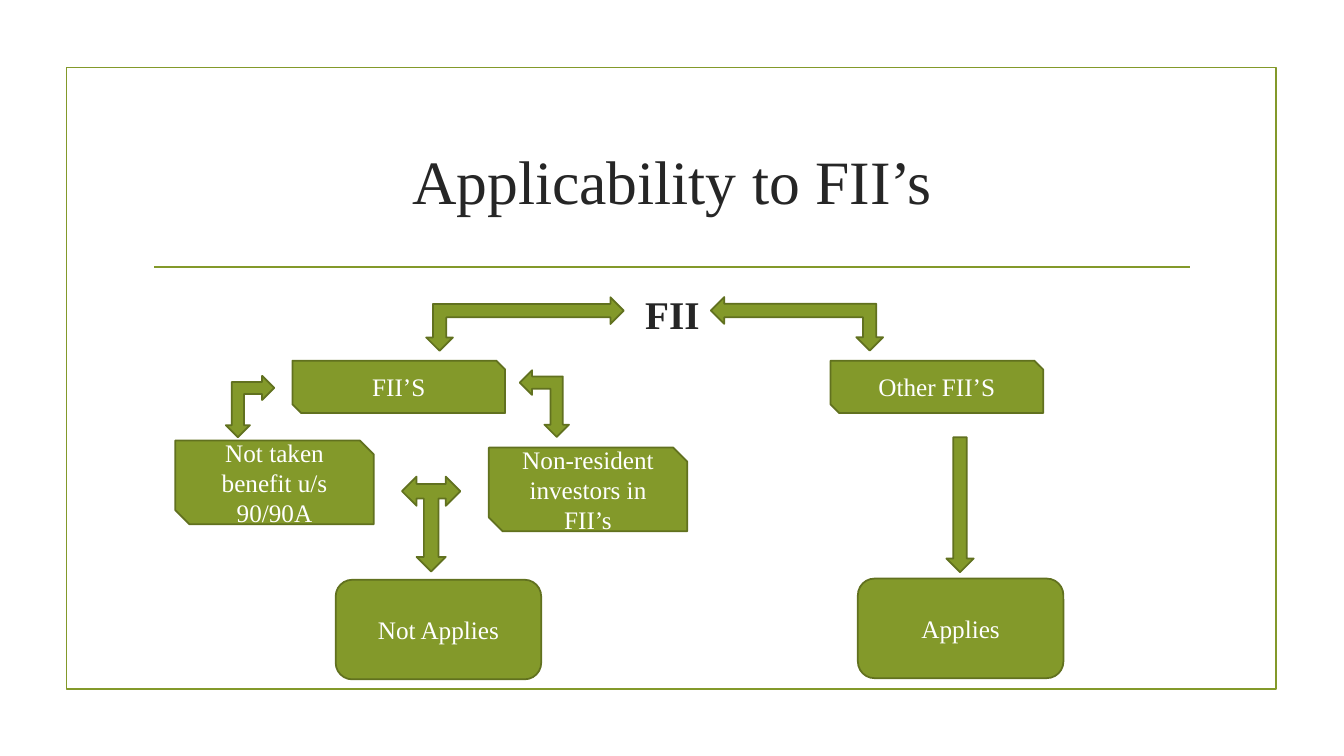
from lxml.etree import SubElement
from pptx import Presentation
from pptx.dml.color import RGBColor
from pptx.enum.shapes import MSO_CONNECTOR, MSO_SHAPE
from pptx.enum.text import MSO_ANCHOR, PP_ALIGN
from pptx.oxml.ns import qn
from pptx.util import Cm, Pt

GREEN = RGBColor(0x83, 0x99, 0x2A)
OLIVE = RGBColor(0x61, 0x71, 0x1F)
DARK = RGBColor(0x26, 0x26, 0x26)
WHITE = RGBColor(0xFF, 0xFF, 0xFF)

TITLE = {"size": Pt(44), "name": "Times New Roman", "bold": False}
HEAD = {"size": Pt(28), "name": "Times New Roman", "bold": True}
LABEL = {"size": Pt(18), "name": "Times New Roman", "bold": False}

SNIP = MSO_SHAPE.SNIP_2_DIAG_RECTANGLE
ROUND = MSO_SHAPE.ROUNDED_RECTANGLE
BEND = MSO_SHAPE.LEFT_UP_ARROW
FORK = MSO_SHAPE.LEFT_RIGHT_UP_ARROW
DOWN = MSO_SHAPE.DOWN_ARROW

BOXES = [
    (SNIP, "FII’S", 7.37, 9.09, 5.36, 1.32),
    (SNIP, "Other FII’S", 20.93, 9.09, 5.36, 1.32),
    (SNIP, "Not taken benefit u/s 90/90A", 4.42, 11.1, 5, 2.11),
    (SNIP, "Non-resident investors in FII’s", 12.32, 11.28, 5, 2.11),
    (ROUND, "Not Applies", 8.46, 14.61, 5.18, 2.51),
    (ROUND, "Applies", 21.62, 14.58, 5.18, 2.51),
]
ARROWS = [
    (BEND, 270, 19.41, 5.99, 1.35, 4.34),
    (BEND, 180, 10.74, 7.49, 4.98, 1.35),
    (BEND, 180, 5.69, 9.47, 1.22, 1.55),
    (BEND, 270, 12.88, 9.55, 1.68, 1.24),
    (FORK, 180, 10.13, 12.01, 1.47, 2.39),
    (DOWN, 0, 23.85, 11.02, 0.69, 3.4),
]


def write(shape, text, style, color, anchor):
    frame = shape.text_frame
    frame.word_wrap = True
    frame.vertical_anchor = anchor
    frame.text = text
    para = frame.paragraphs[0]
    para.alignment = PP_ALIGN.CENTER
    font = para.runs[0].font
    for key, value in style.items():
        setattr(font, key, value)
    font.color.rgb = color


def stroke(item, color):
    item.line.color.rgb = color
    item.line.width = Pt(1.25)


def add_form(slide, kind, place, turn=0):
    shape = slide.shapes.add_shape(kind, *map(Cm, place))
    shape.shadow.inherit = False
    shape.rotation = turn
    shape.fill.solid()
    shape.fill.fore_color.rgb = GREEN
    stroke(shape, OLIVE)
    return shape


def add_border(slide):
    border = slide.shapes.add_shape(
        MSO_SHAPE.RECTANGLE, Cm(1.68), Cm(1.7), Cm(30.48), Cm(15.67))
    border.shadow.inherit = False
    border.fill.background()
    stroke(border, GREEN)


def add_rule(slide):
    rule = slide.shapes.add_connector(
        MSO_CONNECTOR.STRAIGHT, Cm(3.89), Cm(6.73), Cm(30), Cm(6.73))
    stroke(rule, GREEN)
    SubElement(rule._element.spPr, qn("a:effectLst"))


def add_title(slide, text):
    title = slide.shapes.title
    place = {"left": 3.61, "top": 2.72, "width": 26.67, "height": 3.63}
    for key, value in place.items():
        setattr(title, key, Cm(value))
    write(title, text, TITLE, DARK, MSO_ANCHOR.MIDDLE)


def add_head(slide, text):
    head = slide.shapes.add_textbox(Cm(3.61), Cm(7.2), Cm(26.67), Cm(9.1))
    write(head, text, HEAD, DARK, MSO_ANCHOR.TOP)


def main():
    deck = Presentation()
    deck.slide_width, deck.slide_height = Cm(33.87), Cm(19.05)
    slide = deck.slides.add_slide(deck.slide_layouts.get_by_name("Title Only"))
    add_border(slide)
    add_rule(slide)
    add_title(slide, "Applicability to FII’s")
    add_head(slide, "FII")
    for kind, turn, *place in ARROWS:
        add_form(slide, kind, place, turn)
    for kind, text, *place in BOXES:
        box = add_form(slide, kind, place)
        write(box, text, LABEL, WHITE, MSO_ANCHOR.MIDDLE)
    deck.save("out.pptx")


if __name__ == "__main__":
    main()
